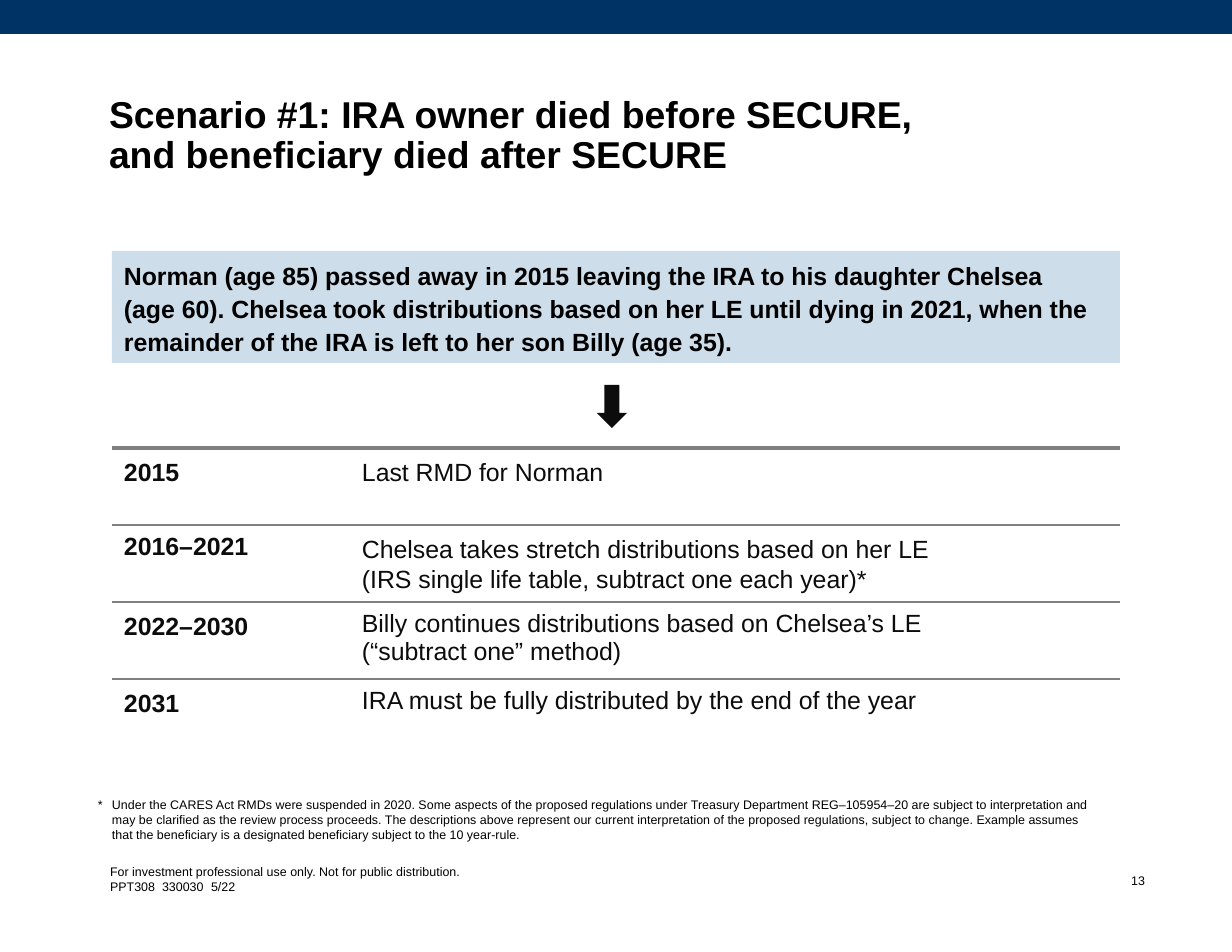
from copy import deepcopy

from lxml import etree
from pptx import Presentation
from pptx.dml.color import RGBColor
from pptx.enum.shapes import MSO_SHAPE
from pptx.enum.text import MSO_ANCHOR, PP_ALIGN
from pptx.oxml.ns import qn
from pptx.util import Pt

RECT, ARROW = MSO_SHAPE.RECTANGLE, MSO_SHAPE.DOWN_ARROW
TOP, MIDDLE, BOTTOM = MSO_ANCHOR.TOP, MSO_ANCHOR.MIDDLE, MSO_ANCHOR.BOTTOM
LEFT, RIGHT = PP_ALIGN.LEFT, PP_ALIGN.RIGHT
NAVY = RGBColor(0x00, 0x33, 0x65)
PALE = RGBColor(0xCD, 0xDD, 0xE9)
BLACK = RGBColor(0x00, 0x00, 0x00)
INK = RGBColor(0x0C, 0x0C, 0x0C)
GRAY = RGBColor(0x80, 0x80, 0x80)
SCALE = 914400 / 112

EVENTS = [
    ("2015", 1.1, "Last RMD for Norman", 1.1),
    ("2016–2021", 1.0, "Chelsea takes stretch distributions based on her LE\v"
     "(IRS single life table, subtract one each year)*", 1.1),
    ("2022–2030", 1.1, "Billy continues distributions based on Chelsea’s LE\v"
     "(“subtract one” method)", 1.0),
    ("2031", 1.1, "IRA must be fully distributed by the end of the year", 1.0),
]
CASE = ("Norman (age 85) passed away in 2015 leaving the IRA to his daughter Chelsea\v"
        "(age 60). Chelsea took distributions based on her LE until dying in 2021, "
        "when the remainder of the IRA is left to her son Billy (age 35).")
NOTE = ("*\tUnder the CARES Act RMDs were suspended in 2020. Some aspects of the proposed "
        "regulations under Treasury Department REG–105954–20 are subject to interpretation "
        "and may be clarified as the review process proceeds. The descriptions above "
        "represent our current interpretation of the proposed regulations, subject to "
        "change. Example assumes that the beneficiary is a designated beneficiary subject "
        "to the 10 year-rule.")


def px(n):
    return round(n * SCALE)


def assign(item, values):
    for name, value in values.items():
        setattr(item, name, value)


def margins(left, top, right, bottom):
    return {"margin_left": px(left), "margin_top": px(top),
            "margin_right": px(right), "margin_bottom": px(bottom)}


def write(para, text, size, color=BLACK, bold=False, space=1.0, align=LEFT):
    para.text = text
    assign(para, {"line_spacing": space, "alignment": align})
    for run in para.runs:
        assign(run.font, {"name": "Arial", "size": Pt(size), "bold": bold})
        run.font.color.rgb = color
    for br in para._p.findall(qn("a:br")):
        br.insert(0, deepcopy(para.runs[0]._r.rPr))


def hang(para, indent):
    props = para._p.get_or_add_pPr()
    props.set("marL", str(px(indent)))
    props.set("indent", str(px(-indent)))


def stops(para, spots):
    tabs = etree.SubElement(para._p.get_or_add_pPr(), qn("a:tabLst"))
    for spot in spots:
        etree.SubElement(tabs, qn("a:tab"), pos=str(px(spot)), algn="l")


def shape(slide, kind, box, color):
    item = slide.shapes.add_shape(kind, *map(px, box))
    item.shadow.inherit = False
    item.fill.solid()
    item.fill.fore_color.rgb = color
    item.line.fill.background()
    return item


def label(slide, box, text, size, anchor=TOP, wrap=True, left=12, right=12, **look):
    frame = slide.shapes.add_textbox(*map(px, box)).text_frame
    assign(frame, {"word_wrap": wrap, "vertical_anchor": anchor,
                   **margins(left, 6, right, 6)})
    for i, line in enumerate(text.split("\n")):
        para = frame.add_paragraph() if i else frame.paragraphs[0]
        write(para, line, size, **look)
    return frame.paragraphs


def rule(cell, side, width):
    line = etree.SubElement(cell._tc.get_or_add_tcPr(), qn("a:" + side),
                            w=str(Pt(width)))
    if width:
        fill = etree.SubElement(line, qn("a:solidFill"))
        etree.SubElement(fill, qn("a:srgbClr"), val=str(GRAY))
    else:
        etree.SubElement(line, qn("a:noFill"))


def events(slide):
    count = len(EVENTS)
    frame = slide.shapes.add_table(count, 2, px(112), px(448), px(1008), px(77 * count))
    table = frame.table
    assign(table, {"first_row": False, "horz_banding": False})
    for col, width in zip(table.columns, (238, 770)):
        col.width = px(width)
    for i, (year, lead, text, space) in enumerate(EVENTS):
        table.rows[i].height = px(77)
        for j, (words, gap) in enumerate(((year, lead), (text, space))):
            cell = table.cell(i, j)
            assign(cell, margins(12, 8, 12, 2))
            write(cell.text_frame.paragraphs[0], words, 16, INK, j == 0, gap)
            rule(cell, "lnL", 0)
            rule(cell, "lnR", 0)
            rule(cell, "lnT", 1 if i else 2.25)
            rule(cell, "lnB", 1 if i < count - 1 else 0)
            cell.fill.background()


def main():
    deck = Presentation()
    assign(deck, {"slide_width": px(1232), "slide_height": px(952)})
    slide = deck.slides.add_slide(deck.slide_layouts[6])
    shape(slide, RECT, (0, 0, 1232, 34), NAVY)
    label(slide, (1121, 869, 30, 26), "13", 8, left=0, right=6,
          space=0.9, align=RIGHT)
    foot = label(slide, (98, 858, 381, 43),
                 "For investment professional use only. Not for public distribution.\n"
                 "PPT308\t330030\t5/22", 8, wrap=False)
    stops(foot[1], (52, 101))
    label(slide, (97, 90, 1024, 39),
          "Scenario #1: IRA owner died before SECURE,\vand beneficiary died after SECURE",
          24, bold=True, space=0.9)
    panel = shape(slide, RECT, (112, 251, 1008, 112), PALE).text_frame
    assign(panel, {"word_wrap": True, "vertical_anchor": MIDDLE, **margins(12, 6, 12, 6)})
    write(panel.paragraphs[0], CASE, 16, bold=True, space=1.1)
    note = label(slide, (86, 820, 1025, 28), NOTE, 8, anchor=BOTTOM)
    hang(note[0], 14)
    shape(slide, ARROW, (597, 385, 30, 43), INK)
    events(slide)
    deck.save("out.pptx")


if __name__ == "__main__":
    main()
